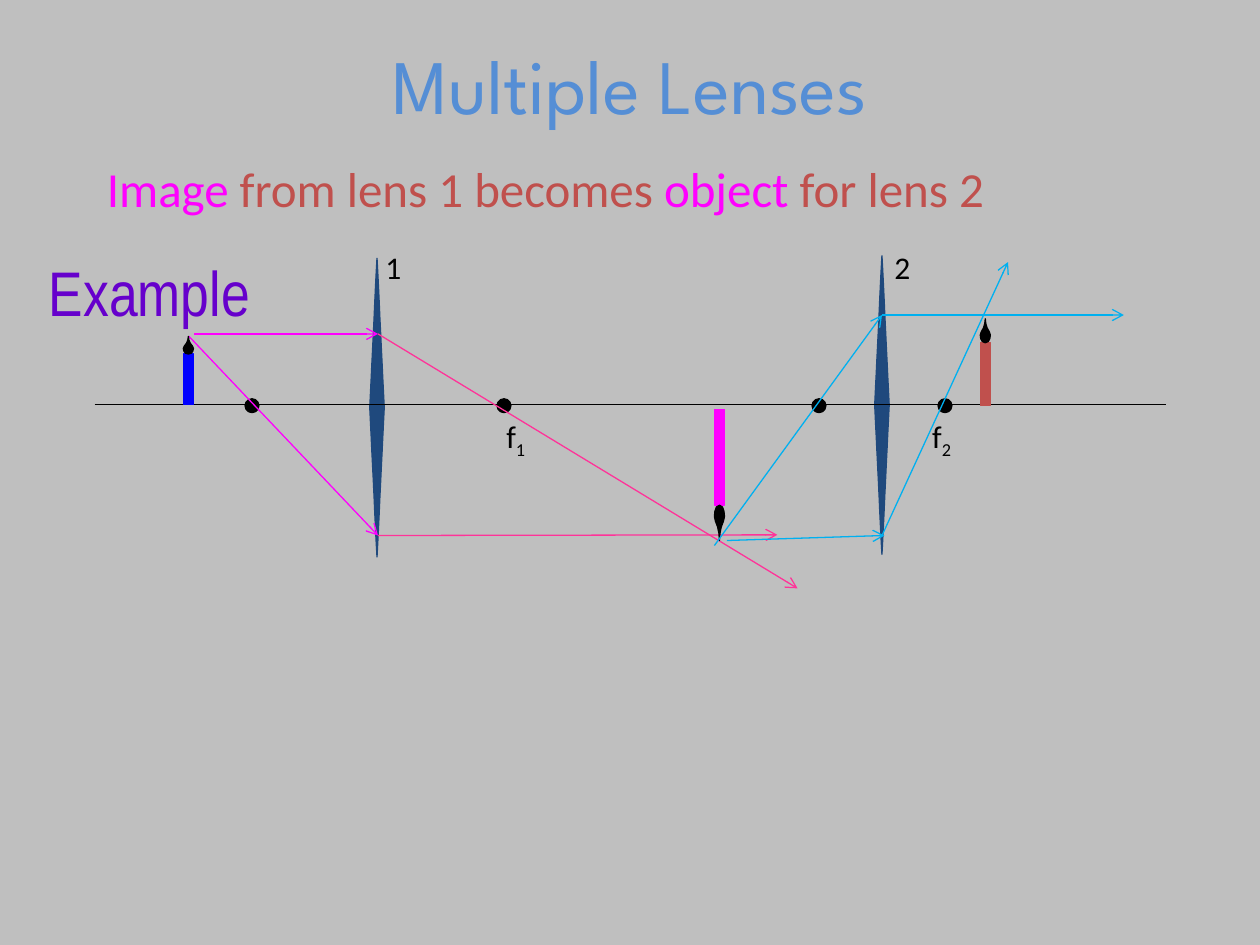
from pptx import Presentation, util as u
from pptx.dml.color import RGBColor
from pptx.enum import shapes, text
from pptx.oxml import parse_xml
from pptx.oxml.ns import nsdecls

BLACK = RGBColor(0x00, 0x00, 0x00)
GRAY = RGBColor(0xBF, 0xBF, 0xBF)
TITLE_BLUE = RGBColor(0x55, 0x8E, 0xD5)
LENS_NAVY = RGBColor(0x1F, 0x49, 0x7D)
MAGENTA = RGBColor(0xFF, 0x00, 0xFF)
PINK = RGBColor(0xFF, 0x33, 0x99)
CYAN = RGBColor(0x00, 0xB0, 0xF0)
BRICK = RGBColor(0xC0, 0x50, 0x4D)
BLUE = RGBColor(0x00, 0x00, 0xFF)
VIOLET = RGBColor(0x66, 0x00, 0xCC)
PURPLE = RGBColor(0xCC, 0x00, 0xCC)

CELL = u.Inches(0.25)
COLUMNS, ROWS = 40, 30
FLAME_OUTLINE = [(0, 0), (0.1, 0.2), (0.35, 0.38), (0.8, 0.55),
                 (1, 0.68), (0.9, 0.83), (0.6, 0.95), (0, 1)]


def cells(*counts):
    """Turn counts of grid cells into lengths."""
    return [round(count * CELL) for count in counts]


def write(frame, *parts, font="Calibri", size=18, color=BLACK, align=None):
    """Write (words, colour, baseline) parts as one formatted paragraph."""
    paragraph = frame.paragraphs[0]
    paragraph.alignment = align
    for words, own_color, baseline in parts:
        run = paragraph.add_run()
        run.text = words
        run.font.name, run.font.size = font, u.Pt(size)
        run.font.color.rgb = own_color or color
        if baseline:
            run.font._element.set("baseline", str(baseline))
    return paragraph


def text_box(slide, box):
    """Add an empty text box and return its frame."""
    frame = slide.shapes.add_textbox(*cells(*box)).text_frame
    frame.word_wrap = True
    return frame


def paint(shape, color):
    """Give a shape one colour for fill and thin outline, without shadow."""
    shape.shadow.inherit = False
    shape.fill.solid()
    shape.fill.fore_color.rgb = color
    shape.line.color.rgb = color
    shape.line.width = u.Pt(0.75)
    return shape


def outline(slide, points, color):
    """Draw a closed outline through points given in cells."""
    first, *others = [cells(*point) for point in points]
    builder = slide.shapes.build_freeform(*first)
    builder.add_line_segments(others, close=True)
    return paint(builder.convert_to_shape(), color)


def ray(slide, origin, start, end, color, arrow=True):
    """Draw a straight line between two points measured from the origin."""
    left, axis = origin
    line = slide.shapes.add_connector(
        shapes.MSO_CONNECTOR.STRAIGHT,
        *cells(left + start[0], axis + start[1], left + end[0], axis + end[1]))
    line.line.color.rgb = color
    line.line.width = u.Pt(0.75)
    if arrow:
        line.line._get_or_add_ln().append(
            parse_xml(f'<a:tailEnd {nsdecls("a")} type="arrow"/>'))
    line._element.spPr.append(parse_xml(f'<a:effectLst {nsdecls("a")}/>'))


def lens(slide, x, y):
    """Draw a slim convex lens centred on a point."""
    half_height, waist, bulge = 4.74, 0.23, 0.14
    steps = [n / 10 for n in range(-10, 11)]
    right = [(max(waist * (1 - abs(t)), bulge * (1 - t * t)), t * half_height)
             for t in steps]
    left = [(-dx, dy) for dx, dy in reversed(right[1:-1])]
    outline(slide, [(x + dx, y + dy) for dx, dy in right + left], LENS_NAVY)


def candle(slide, x, base, wax, flame, color):
    """Draw a candle upward from its base, or downward for negative heights."""
    half_width = 0.16
    top = base - wax
    stick = paint(slide.shapes.add_shape(
        shapes.MSO_SHAPE.RECTANGLE,
        *cells(x - half_width, min(base, top), 2 * half_width, abs(wax))), color)
    left = [(-dx, dy) for dx, dy in reversed(FLAME_OUTLINE[1:-1])]
    fire = outline(slide, [(x + half_width * dx, top - flame * (1 - dy))
                           for dx, dy in FLAME_OUTLINE + left], BLACK)
    slide.shapes.add_group_shape([stick, fire])


def focal_point(slide, x, y, diameter=0.44):
    """Draw a dot centred on a focal point."""
    paint(slide.shapes.add_shape(
        shapes.MSO_SHAPE.OVAL,
        *cells(x - diameter / 2, y - diameter / 2, diameter, diameter)), BLACK)


def heading(slide, title_box, statement_box):
    """Fill the title and the statement below it."""
    title = slide.shapes.title
    title.left, title.top, title.width, title.height = cells(*title_box)
    title.text_frame.vertical_anchor = text.MSO_ANCHOR.MIDDLE
    write(title.text_frame, ("Multiple Lenses", None, None), font="League Spartan",
          size=44, color=TITLE_BLUE, align=text.PP_ALIGN.CENTER)
    write(text_box(slide, statement_box),
          ("Image", MAGENTA, None), (" from lens 1 becomes ", None, None),
          ("object", MAGENTA, None), (" for lens 2", None, None),
          size=28, color=BRICK)


def example_label(slide, box):
    """Write the outlined gradient word that opens the diagram."""
    paragraph = write(text_box(slide, box), ("Example", None, None),
                      font="Arial Narrow", size=36)
    font = paragraph.runs[0].font
    font.fill.gradient()
    font.fill.gradient_angle = 270
    for stop, color in zip(font.fill.gradient_stops, (VIOLET, PURPLE)):
        stop.color.rgb = color
    edge = parse_xml(f'<a:ln {nsdecls("a")} w="9525"/>')
    edge.append(parse_xml(f'<a:solidFill {nsdecls("a")}>'
                          '<a:srgbClr val="CC99FF"/></a:solidFill>'))
    font._element.insert(0, edge)


def optical_bench(slide, left, axis, length):
    """Draw lenses, focal points, candles and rays along the axis."""
    origin = left, axis
    upper, lower, final = -2.24, 4.16, -2.84
    first, second = 9, 25
    lens(slide, left + first - 0.03, axis + 0.1)
    lens(slide, left + second, axis + 0.02)
    ray(slide, origin, (0, 0), (length, 0), BLACK, arrow=False)
    for x in (first - 4, first + 4, second - 2, second + 2):
        focal_point(slide, left + x, axis + 0.04)
    for number, number_x, focus_x in (("1", 8.84, 12.68), ("2", second, 26.2)):
        write(text_box(slide, (left + number_x, axis - 5.16, 1.76, 2)),
              (number, None, None))
        write(text_box(slide, (left + focus_x, axis + 0.2, 2.44, 2)),
              ("f", None, None), (number, None, -25000))
    for start, end, color in (
            ((3, -2.16), (first, lower), MAGENTA),
            ((3.16, upper), (first, upper), MAGENTA),
            ((first, upper), (22.32, 5.84), PINK),
            ((first, lower), (21.68, lower - 0.02), PINK)):
        ray(slide, origin, start, end, color)
    candle(slide, left + 2.98, axis, 1.6, 0.56, BLUE)
    candle(slide, left + 19.84, axis + 0.16, -3.04, -1.12, MAGENTA)
    for start, end in (
            ((19.68, 4.48), (second, final)),
            ((20.08, 4.32), (second + 0.08, lower)),
            ((second, final), (32.68, final)),
            ((second, lower), (29, -4.52))):
        ray(slide, origin, start, end, CYAN)
    candle(slide, left + 28.28, axis + 0.04, 2, 0.76, BRICK)


def main():
    """Build and save the slide."""
    deck = Presentation()
    deck.slide_width, deck.slide_height = cells(COLUMNS, ROWS)
    slide = deck.slides.add_slide(deck.slide_layouts[5])
    slide.background.fill.solid()
    slide.background.fill.fore_color.rgb = GRAY
    heading(slide, (3, 0.16, 34, 5), (3, 4.84, 34.5, 2.28))
    optical_bench(slide, left=3, axis=12.84, length=34)
    example_label(slide, (1.16, 7.84, 7.6, 4))
    deck.save("out.pptx")


if __name__ == "__main__":
    main()
